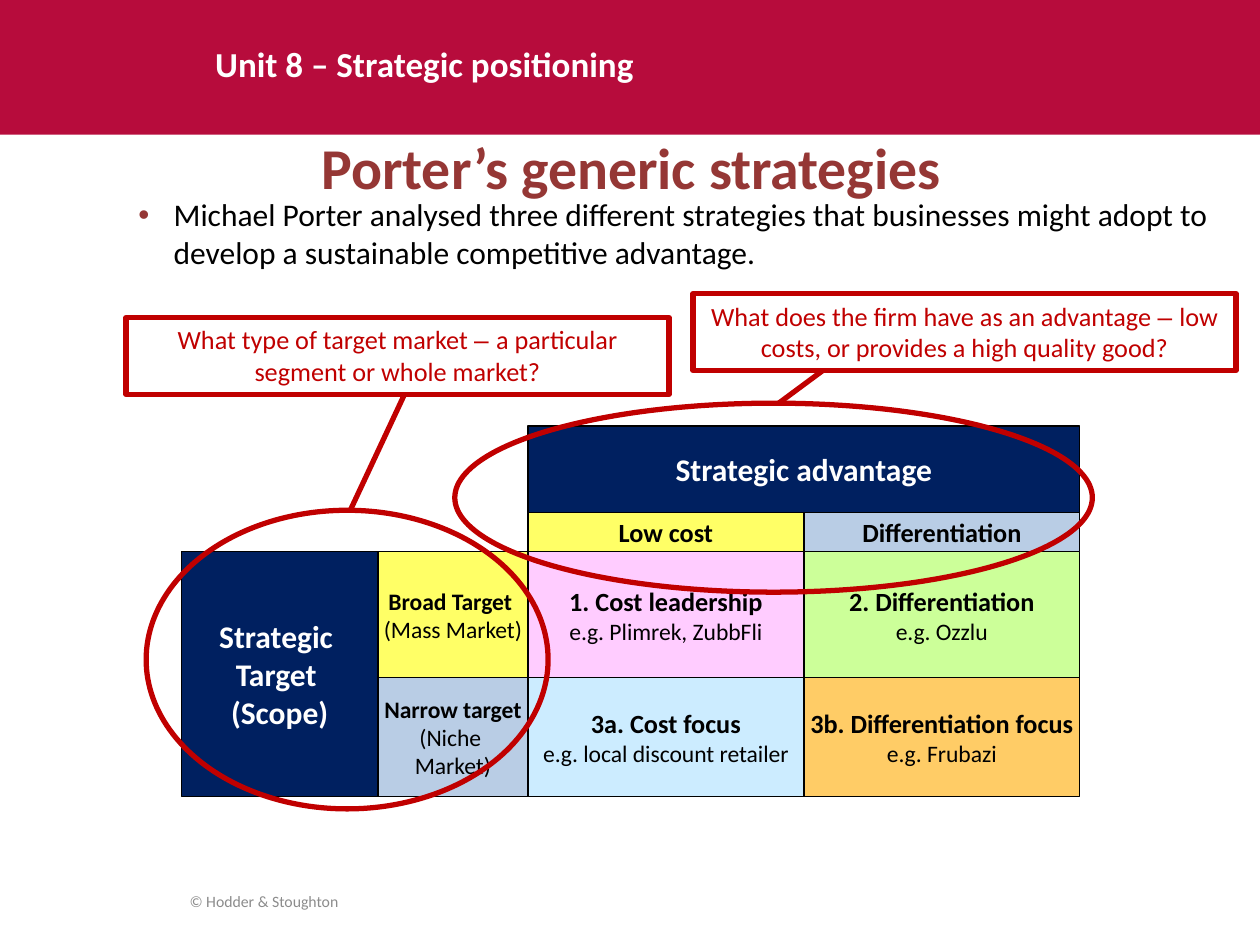
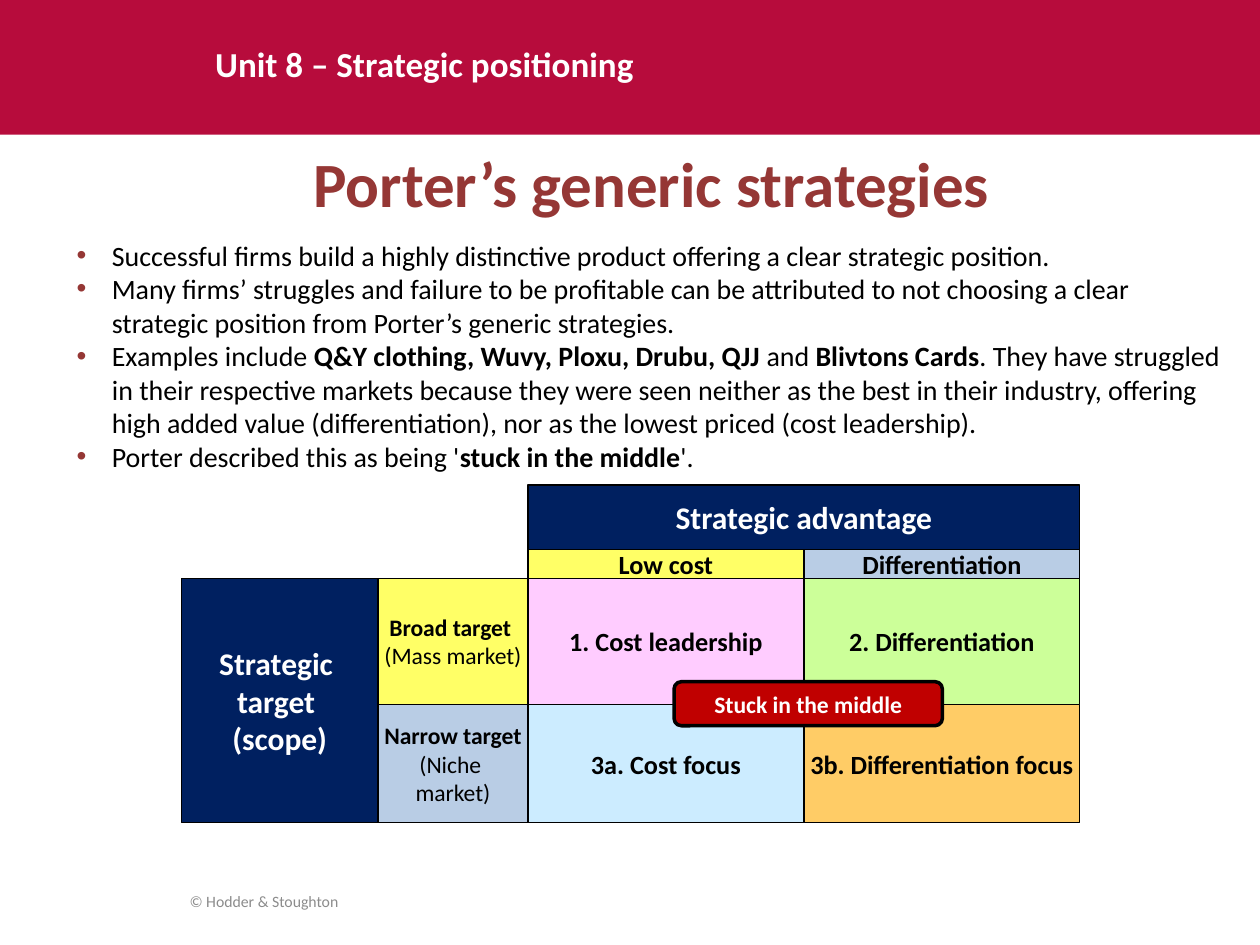
from dataclasses import dataclass
from itertools import accumulate, product
from typing import Optional

import lxml.etree
import pptx
import pptx.dml.color
import pptx.enum.shapes
import pptx.enum.text
import pptx.oxml.ns
import pptx.util

EMU_PER_PX = 9144
SHAPE = pptx.enum.shapes.MSO_SHAPE
ALIGN = pptx.enum.text.PP_ALIGN
ANCHOR = pptx.enum.text.MSO_ANCHOR

BLACK = "000000"
WHITE = "FFFFFF"
CRIMSON = "B70C3C"
BRICK = "953735"
NAVY = "002060"
YELLOW = "FFFF66"
PALE_BLUE = "B9CDE5"
RED = "C00000"
GREY = "8C8C8C"
QUADRANT_FILLS = ["FFCCFF", "CCFF99", "CCECFF", "FFCC66"]
STRATEGIES = [
    "1. Cost leadership", "2. Differentiation",
    "3a. Cost focus", "3b. Differentiation focus",
]

SCOPE_LEFT = 144
TARGET_LEFT = 300
ADVANTAGE_LEFT = 419
ADVANTAGE_WIDTH = 219
TARGET_HEIGHTS = [100, 94]
BULLET_INDENT = 28


@dataclass(frozen=True)
class Box:
    left: int
    top: int
    width: int
    height: int


@dataclass(frozen=True)
class Run:
    text: str
    size: float
    color: str = BLACK
    bold: bool = False
    font: str = "Calibri"


Lines = list[list[Run]]


@dataclass(frozen=True)
class Matrix:
    top: int
    advantage_height: int
    option_height: int
    scope: list[str]
    targets: list[list[str]]
    examples: list[str]


@dataclass(frozen=True)
class Callout:
    ring: Box
    start: tuple[int, int]
    end: tuple[int, int]
    question: Box
    before_dash: str
    after_dash: str


def px(length: int) -> pptx.util.Emu:
    return pptx.util.Emu(length * EMU_PER_PX)


def rgb(color: str) -> pptx.dml.color.RGBColor:
    return pptx.dml.color.RGBColor.from_string(color)


def place(box: Box) -> list[pptx.util.Emu]:
    return [px(length) for length in (box.left, box.top, box.width, box.height)]


def add_bullet(paragraph) -> None:
    properties = paragraph._p.get_or_add_pPr()
    properties.set("marL", str(px(BULLET_INDENT)))
    properties.set("indent", str(-px(BULLET_INDENT)))
    qn = pptx.oxml.ns.qn
    bullet_color = lxml.etree.SubElement(properties, qn("a:buClr"))
    lxml.etree.SubElement(bullet_color, qn("a:srgbClr"), val=BRICK)
    lxml.etree.SubElement(properties, qn("a:buFont"), typeface="Arial")
    lxml.etree.SubElement(properties, qn("a:buChar"), char="•")


def write(shape, lines: Lines, align=ALIGN.CENTER, anchor=ANCHOR.MIDDLE,
          wrap: bool = True, bulleted: bool = False) -> None:
    frame = shape.text_frame
    frame.word_wrap = wrap
    frame.vertical_anchor = anchor
    for index, line in enumerate(lines):
        paragraph = frame.add_paragraph() if index else frame.paragraphs[0]
        if bulleted:
            add_bullet(paragraph)
        paragraph.alignment = align
        for piece in line:
            run = paragraph.add_run()
            run.text = piece.text
            run.font.size = pptx.util.Pt(piece.size)
            run.font.name = piece.font
            run.font.bold = piece.bold
            run.font.color.rgb = rgb(piece.color)


def add_text(slide, box: Box, lines: Lines, **layout) -> None:
    write(slide.shapes.add_textbox(*place(box)), lines, **layout)


def add_figure(slide, kind, box: Box, fill: Optional[str] = None,
               outline: Optional[str] = None, weight: float = 0.75):
    figure = slide.shapes.add_shape(kind, *place(box))
    figure.shadow.inherit = False
    if fill:
        figure.fill.solid()
        figure.fill.fore_color.rgb = rgb(fill)
    else:
        figure.fill.background()
    if outline:
        figure.line.color.rgb = rgb(outline)
        figure.line.width = pptx.util.Pt(weight)
    else:
        figure.line.fill.background()
    return figure


def add_cell(slide, box: Box, fill: str, lines: Lines) -> None:
    cell = add_figure(slide, SHAPE.RECTANGLE, box, fill, BLACK)
    write(cell, lines, wrap=False)


def add_unit_slide(deck, title_box: Box, title_size: int, body_box: Box, body: Lines):
    slide = deck.slides.add_slide(deck.slide_layouts[6])
    add_figure(slide, SHAPE.RECTANGLE, Box(0, 0, 1000, 107), CRIMSON)
    add_text(slide, Box(161, 29, 803, 44),
             [[Run("Unit 8 – Strategic positioning", 20, WHITE, True)]],
             align=ALIGN.LEFT, anchor=ANCHOR.TOP)
    add_text(slide, title_box,
             [[Run("Porter’s generic strategies", title_size, BRICK, True)]])
    add_text(slide, body_box, body, align=ALIGN.LEFT, anchor=ANCHOR.TOP, bulleted=True)
    add_text(slide, Box(51, 695, 317, 40), [[Run("© Hodder & Stoughton", 9, GREY)]])
    return slide


def add_matrix(slide, matrix: Matrix) -> None:
    heights = [matrix.advantage_height, matrix.option_height, *TARGET_HEIGHTS]
    advantage_top, option_top, *target_tops, _ = accumulate(heights, initial=matrix.top)
    columns = [ADVANTAGE_LEFT + ADVANTAGE_WIDTH * column for column in range(2)]

    for index, (row, column) in enumerate(product(range(2), range(2))):
        lines = [[Run(STRATEGIES[index], 15, bold=True)]]
        if matrix.examples:
            lines.append([Run(matrix.examples[index], 13.5)])
        box = Box(columns[column], target_tops[row], ADVANTAGE_WIDTH, TARGET_HEIGHTS[row])
        add_cell(slide, box, QUADRANT_FILLS[index], lines)

    options = zip(columns, (YELLOW, PALE_BLUE), ("Low cost", "Differentiation"))
    for left, fill, option in options:
        add_cell(slide, Box(left, option_top, ADVANTAGE_WIDTH, matrix.option_height),
                 fill, [[Run(option, 15, bold=True)]])
    add_cell(slide,
             Box(ADVANTAGE_LEFT, advantage_top, 2 * ADVANTAGE_WIDTH, matrix.advantage_height),
             NAVY, [[Run("Strategic advantage", 18, WHITE, True)]])

    add_cell(slide,
             Box(SCOPE_LEFT, target_tops[0], TARGET_LEFT - SCOPE_LEFT, sum(TARGET_HEIGHTS)),
             NAVY, [[Run(word, 18, WHITE, True)] for word in matrix.scope])
    targets = zip(target_tops, TARGET_HEIGHTS, (YELLOW, PALE_BLUE), matrix.targets)
    for top, height, fill, target in targets:
        lines = [[Run(text, 13.5, bold=index == 0)] for index, text in enumerate(target)]
        add_cell(slide, Box(TARGET_LEFT, top, ADVANTAGE_LEFT - TARGET_LEFT, height),
                 fill, lines)


def add_callout(slide, callout: Callout) -> None:
    add_figure(slide, SHAPE.OVAL, callout.ring, outline=RED, weight=3)
    leader = slide.shapes.add_connector(
        pptx.enum.shapes.MSO_CONNECTOR.STRAIGHT,
        *[px(length) for length in (*callout.start, *callout.end)])
    leader.line.color.rgb = rgb(RED)
    leader.line.width = pptx.util.Pt(3)
    lxml.etree.SubElement(leader._element.spPr, pptx.oxml.ns.qn("a:effectLst"))
    question = add_figure(slide, SHAPE.RECTANGLE, callout.question, WHITE, RED, 3)
    write(question, [[Run(callout.before_dash, 15, RED),
                      Run("– ", 15, RED, font="Arial"),
                      Run(callout.after_dash, 15, RED)]], anchor=ANCHOR.TOP)


def build_strategies(deck) -> None:
    slide = add_unit_slide(
        deck, Box(52, 79, 898, 106), 33, Box(100, 150, 900, 445),
        [[Run("Michael Porter analysed three different strategies that businesses "
              "might adopt to develop a sustainable competitive advantage.", 18)]])
    add_matrix(slide, Matrix(
        top=338, advantage_height=69, option_height=31,
        scope=["Strategic ", "Target ", "(Scope)"],
        targets=[["Broad Target ", "(Mass Market)"],
                 ["Narrow target", "(Niche ", "Market)"]],
        examples=["e.g. Plimrek, ZubbFli", "e.g. Ozzlu",
                  "e.g. local discount retailer", "e.g. Frubazi"]))
    add_callout(slide, Callout(
        Box(361, 320, 506, 150), (668, 283), (618, 320), Box(550, 233, 431, 61),
        "What does the firm have as an advantage ",
        "low costs, or provides a high quality good?"))
    add_callout(slide, Callout(
        Box(116, 405, 319, 237), (322, 311), (278, 405), Box(100, 252, 431, 61),
        "What type of target market ",
        "a particular segment or whole market?"))


def build_stuck_in_the_middle(deck) -> None:
    slide = add_unit_slide(
        deck, Box(68, 92, 898, 106), 36, Box(51, 184, 932, 419),
        [[Run("Successful firms build a highly distinctive product offering a clear "
              "strategic position.", 16)],
         [Run("Many firms’ struggles and failure to be profitable can be attributed to "
              "not choosing a clear strategic position from Porter’s generic "
              "strategies.", 16)],
         [Run("Examples include ", 16),
          Run("Q&Y clothing, Wuvy, Ploxu, Drubu, QJJ ", 16, bold=True),
          Run("and ", 16),
          Run("Blivtons Cards", 16, bold=True),
          Run(". They have struggled in their respective markets because they were seen "
              "neither as the best in their industry, offering high added value "
              "(differentiation), nor as the lowest priced (cost leadership).", 16)],
         [Run("Porter described this as being '", 16),
          Run("stuck in the middle", 16, bold=True),
          Run("'.", 16)]])
    add_matrix(slide, Matrix(
        top=385, advantage_height=51, option_height=23,
        scope=["Strategic ", "target ", "(scope)"],
        targets=[["Broad target ", "(Mass market)"],
                 ["Narrow target", "(Niche ", "market)"]],
        examples=[]))
    stuck = add_figure(slide, SHAPE.ROUNDED_RECTANGLE, Box(535, 541, 213, 35),
                       RED, BLACK, 2)
    write(stuck, [[Run("Stuck in the middle", 13.5, WHITE, True)]])


def main() -> None:
    deck = pptx.Presentation()
    deck.slide_width = px(1000)
    deck.slide_height = px(750)
    build_strategies(deck)
    build_stuck_in_the_middle(deck)
    deck.save("out.pptx")


if __name__ == "__main__":
    main()
